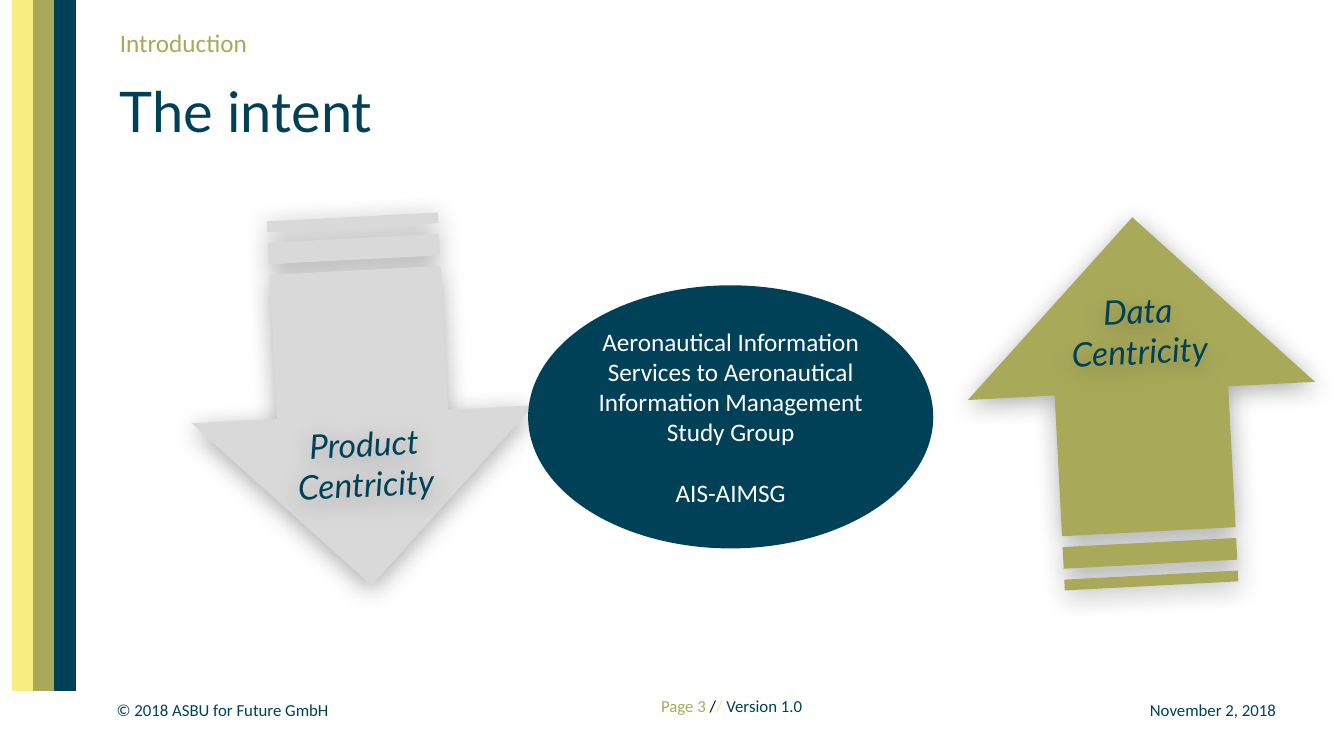
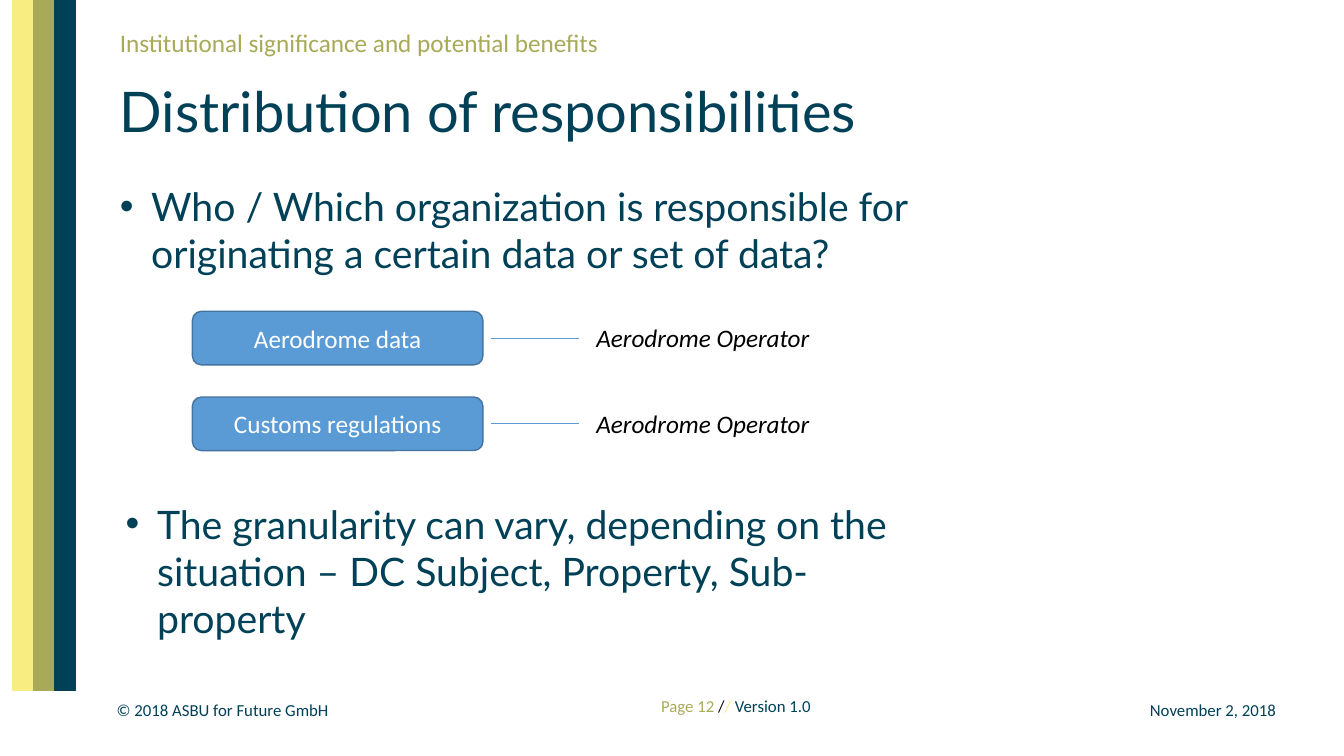
import lxml.etree
import pptx
import pptx.dml.color
import pptx.enum.shapes
import pptx.enum.text
import pptx.oxml.ns
import pptx.util

Cm, Pt = pptx.util.Cm, pptx.util.Pt
SHAPE = pptx.enum.shapes.MSO_SHAPE
ALIGN = pptx.enum.text.PP_ALIGN
ANCHOR = pptx.enum.text.MSO_ANCHOR

# Shared look
NAVY, OLIVE, YELLOW = "004158", "A9AA59", "F7ED81"
GREY, BLUE, EDGE = "D9D9D9", "5B9BD5", "43739E"
WHITE, BLACK = "FFFFFF", "000000"
TITLE = {"name": "Lato", "size": Pt(40)}
BODY = {"name": "Lato", "size": Pt(28)}
LABEL = {"name": "Lato", "size": Pt(24), "italic": True}
PLAIN = {"name": "Calibri", "size": Pt(18)}
SLANT = {"name": "Calibri", "size": Pt(18), "italic": True}
SMALL = {"name": "Calibri", "size": Pt(12)}
BANDS = [YELLOW, OLIVE, NAVY]
BAND_LEFT, BAND_WIDE, BAND_HIGH = 0.32, 0.53, 17.4
TILT = -3

# Content: places are left, top, width, height in cm
HEADS = [
    {"kicker": "Introduction", "title": "The intent", "page": 3},
    {"kicker": "Institutional significance and potential benefits",
     "title": "Distribution of responsibilities", "page": 12},
]
ARROWS = [
    {"place": (4.47, 5.79, 9.3, 8.64), "turn": 90, "fill": GREY,
     "lines": ["Product Centricity"], "spot": (6.96, 10.54, 4.47, 2.31)},
    {"place": (24.13, 5.74, 9.3, 8.76), "turn": 270, "fill": OLIVE,
     "lines": ["Data", "Centricity"], "spot": (26.46, 7.19, 4.47, 2.31)},
]
GROUP = ["Aeronautical Information Services to Aeronautical "
         "Information Management Study Group", "AIS-AIMSG"]
POINTS = [
    ("Who / Which organization is responsible for originating "
     "a certain data or set of data?", (2.77, 4.47, 23.22, 2.64)),
    ("The granularity can vary, depending on the situation – "
     "DC Subject, Property, Sub-property", (2.92, 12.47, 21.13, 3.84)),
]
OWNERS = [("Aerodrome data", "Aerodrome Operator"),
          ("Customs regulations", "Aerodrome Operator")]


def tint(code):
    return pptx.dml.color.RGBColor.from_string(code)


def apply(target, values):
    for name, value in values.items():
        setattr(target, name, value)


def add_xml(parent, tag, **values):
    return lxml.etree.SubElement(parent, pptx.oxml.ns.qn(tag), values)


def write(shape, lines, font, color, align=ALIGN.LEFT,
          anchor=ANCHOR.TOP, gap=0, bullet=False):
    """Each line is a string or a list of (text, colour) runs."""
    frame = shape.text_frame
    apply(frame, {"word_wrap": True, "vertical_anchor": anchor})
    for rank, line in enumerate(lines):
        para = frame.add_paragraph() if rank else frame.paragraphs[0]
        para.alignment = align
        if rank and gap:
            para.space_before = Pt(gap)
        if bullet:
            props = para._p.get_or_add_pPr()
            props.set("marL", str(Cm(0.79)))
            props.set("indent", str(-Cm(0.79)))
            add_xml(props, "a:buFont", typeface="Arial")
            add_xml(props, "a:buChar", char="•")
        for text, shade in [(line, color)] if isinstance(line, str) else line:
            run = para.add_run()
            run.text = text
            apply(run.font, font)
            run.font.color.rgb = tint(shade)


def add_text(slide, place, lines, font, color, **layout):
    box = slide.shapes.add_textbox(*map(Cm, place))
    write(box, lines, font, color, **layout)
    return box


def add_form(slide, kind, place, fill, edge=None):
    form = slide.shapes.add_shape(kind, *map(Cm, place))
    form.shadow.inherit = False
    form.fill.solid()
    form.fill.fore_color.rgb = tint(fill)
    if edge:
        form.line.color.rgb = tint(edge)
        form.line.width = Pt(1)
    else:
        form.line.fill.background()
    return form


def cast_shade(shape):
    shape.shadow.inherit = False
    effects = shape._element.spPr.find(pptx.oxml.ns.qn("a:effectLst"))
    shade = add_xml(effects, "a:outerShdw", blurRad=str(Pt(17.8)),
                    dist=str(Pt(4)), dir=str(87 * 60000), rotWithShape="0")
    color = add_xml(shade, "a:srgbClr", val=BLACK)
    add_xml(color, "a:alpha", val="33000")


def add_page(deck, head):
    slide = deck.slides.add_slide(deck.slide_layouts[6])
    # Side bands
    for rank, color in enumerate(BANDS):
        left = BAND_LEFT + rank * BAND_WIDE
        add_form(slide, SHAPE.FLOWCHART_PROCESS,
                 (left, 0, BAND_WIDE, BAND_HIGH), color, color)
    # Footer
    add_text(slide, (2.69, 17.5, 5.87, 0.76),
             ["© 2018 ASBU for Future GmbH"], SMALL, NAVY)
    add_text(slide, (27.76, 17.5, 4.65, 0.76),
             ["November 2, 2018"], SMALL, NAVY, align=ALIGN.RIGHT)
    page = [(f"Page {head['page']} ", OLIVE), ("/", BLACK),
            ("/ ", YELLOW), ("Version 1.0", NAVY)]
    add_text(slide, (16.41, 17.4, 5.08, 0.76), [page], SMALL, NAVY)
    # Heading
    add_text(slide, (2.77, 1.09, 29.34, 3.38), [head["title"]],
             TITLE, NAVY, anchor=ANCHOR.MIDDLE)
    add_text(slide, (2.77, 0.57, 29.34, 1.02), [head["kicker"]], PLAIN, OLIVE)
    return slide


def draw_intent(slide):
    # Tilted arrows with labels
    for arrow in ARROWS:
        form = add_form(slide, SHAPE.STRIPED_RIGHT_ARROW,
                        arrow["place"], arrow["fill"])
        form.rotation = arrow["turn"] + TILT
        label = add_text(slide, arrow["spot"], arrow["lines"],
                         LABEL, NAVY, align=ALIGN.CENTER)
        label.rotation = TILT
        for part in (form, label):
            cast_shade(part)
    # Study group
    oval = add_form(slide, SHAPE.OVAL, (13.31, 7.19, 10.21, 6.63), NAVY)
    write(oval, GROUP, PLAIN, WHITE, align=ALIGN.CENTER,
          anchor=ANCHOR.MIDDLE, gap=22)


def draw_duties(slide):
    # Bullet points
    for text, place in POINTS:
        add_text(slide, place, [text], BODY, NAVY, bullet=True)
    # Data sets and their owners
    high, note_high = 1.35, 1.02
    for rank, (data, owner) in enumerate(OWNERS):
        mid = 8.52 + rank * 2.16
        box = add_form(slide, SHAPE.ROUNDED_RECTANGLE,
                       (4.85, mid - high / 2, 7.32, high), BLUE, EDGE)
        write(box, [data], PLAIN, WHITE, align=ALIGN.CENTER,
              anchor=ANCHOR.MIDDLE)
        add_text(slide, (14.78, mid - note_high / 2, 5.99, note_high),
                 [owner], SLANT, BLACK)
        link = slide.shapes.add_connector(
            pptx.enum.shapes.MSO_CONNECTOR.STRAIGHT,
            Cm(12.37), Cm(mid), Cm(14.58), Cm(mid))
        link.line.color.rgb = tint(BLUE)
        link.line.width = Pt(0.5)
        add_xml(link._element.spPr, "a:effectLst")


def main():
    deck = pptx.Presentation()
    apply(deck, {"slide_width": Cm(33.87), "slide_height": Cm(19.05)})
    for head, draw in zip(HEADS, (draw_intent, draw_duties)):
        draw(add_page(deck, head))
    deck.save("out.pptx")


if __name__ == "__main__":
    main()
